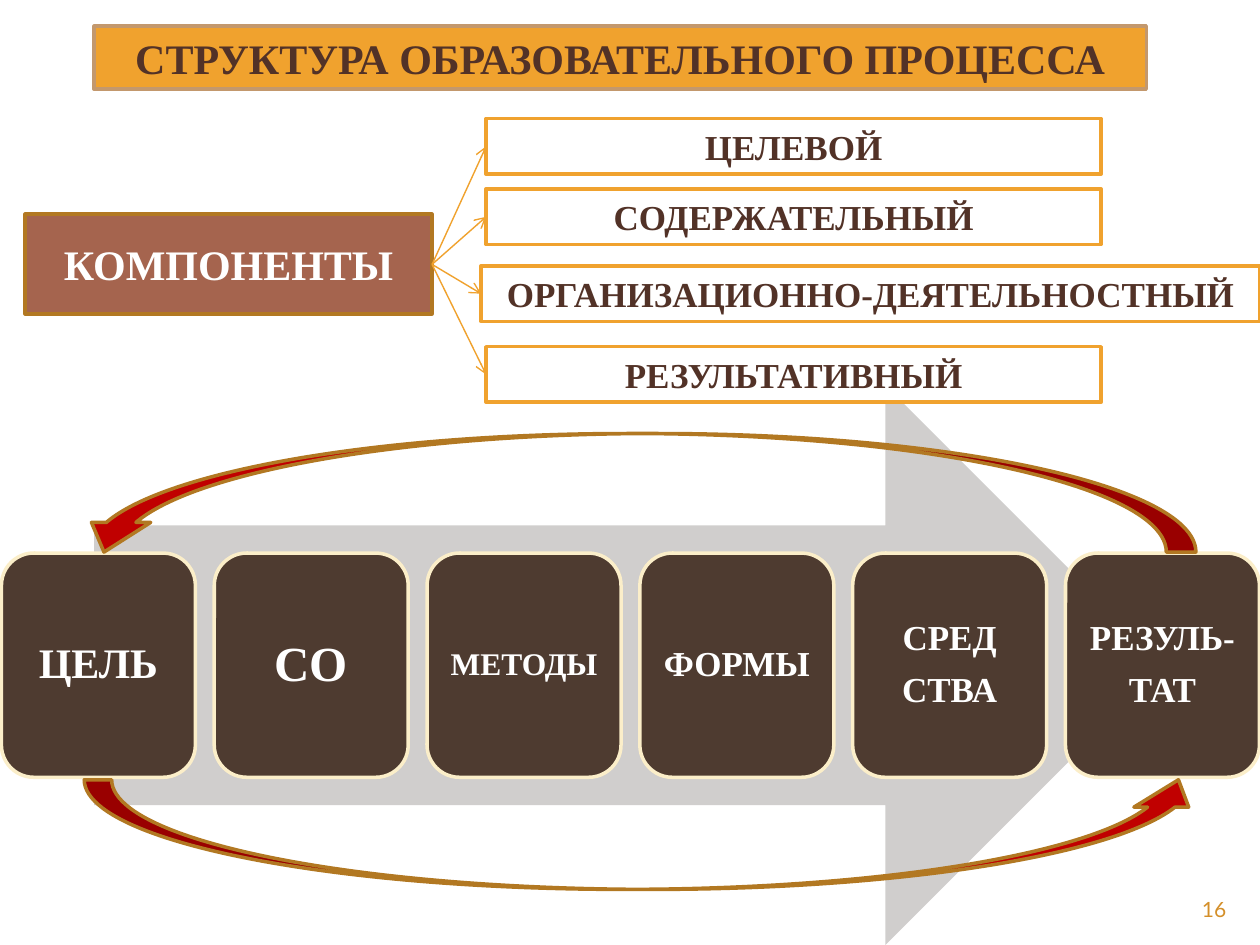
from lxml import etree
from pptx import Presentation
from pptx.dml.color import RGBColor
from pptx.enum.shapes import MSO_CONNECTOR, MSO_SHAPE
from pptx.enum.text import MSO_ANCHOR, PP_ALIGN
from pptx.oxml.ns import qn
from pptx.util import Cm, Pt

RECT, ROUND = MSO_SHAPE.RECTANGLE, MSO_SHAPE.ROUNDED_RECTANGLE
ARROW = MSO_SHAPE.RIGHT_ARROW
UP, DOWN = MSO_SHAPE.CURVED_UP_ARROW, MSO_SHAPE.CURVED_DOWN_ARROW
LINE = MSO_CONNECTOR.STRAIGHT
MID = MSO_ANCHOR.MIDDLE
MAIN, SIDE = PP_ALIGN.CENTER, PP_ALIGN.RIGHT

HUES = {
    "gold": "F0A22E", "tan": "C3986D", "brown": "523227", "clay": "A5644E",
    "rust": "B27822", "grey": "D0CECD", "dark": "4E3B30", "cream": "FBEEC9",
    "red": "C00000", "white": "FFFFFF", "amber": "D48F29",
}


def hue(name):
    return RGBColor.from_string(HUES[name])


def write(frame, text, size=20, color="brown", font="Times New Roman",
          bold=True, align=MAIN, lead=None, after=0, inset=0.25):
    frame.word_wrap = True
    frame.vertical_anchor = MID
    frame.margin_left = frame.margin_right = Cm(inset)
    frame.margin_top = frame.margin_bottom = Cm(0.13)
    for i, line in enumerate(text.split("\n")):
        para = frame.add_paragraph() if i else frame.paragraphs[0]
        para.alignment = align
        para.line_spacing = lead
        para.space_after = Pt(after)
        run = para.add_run()
        run.text = line
        run.font.name = font
        run.font.size = Pt(size)
        run.font.bold = bold
        run.font.color.rgb = hue(color)


class Deck:
    """Hold the line style and the current slide."""

    def __init__(self, slide, width=2, thin=0.79):
        self.items = slide.shapes
        self.width = Pt(width)
        self.thin = Pt(thin)

    def shape(self, kind, at, fill, edge=None, text=None, **style):
        item = self.items.add_shape(kind, *map(Cm, at))
        item.shadow.inherit = False
        item.fill.solid()
        item.fill.fore_color.rgb = hue(fill)
        if edge:
            item.line.color.rgb = hue(edge)
            item.line.width = self.width
        else:
            item.line.fill.background()
        if text:
            write(item.text_frame, text, **style)
        return item

    def label(self, at, text, **style):
        item = self.items.add_textbox(*map(Cm, at))
        write(item.text_frame, text, **style)

    def arrow(self, start, end, color):
        item = self.items.add_connector(LINE, *map(Cm, start + end))
        item.line.color.rgb = hue(color)
        item.line.width = self.thin
        etree.SubElement(item.line._get_or_add_ln(), qn("a:tailEnd"), type="arrow")
        etree.SubElement(item._element.spPr, qn("a:effectLst"))


def main():
    show = Presentation()
    show.slide_width, show.slide_height = Cm(25.4), Cm(19.05)
    deck = Deck(show.slides.add_slide(show.slide_layouts[6]))

    deck.label((22.86, 17.98, 2.11, 0.69), "16", size=12, color="amber",
               font="Lato", bold=False, align=SIDE)
    deck.shape(RECT, (1.9, 0.53, 21.21, 1.27), "gold", "tan",
               "СТРУКТУРА ОБРАЗОВАТЕЛЬНОГО ПРОЦЕССА", size=24)

    deck.shape(ARROW, (1.9, 7.77, 21.59, 11.28), "grey")
    steps = [("ЦЕЛЬ", 24), ("СО", 28), ("МЕТОДЫ", 18), ("ФОРМЫ", 20),
             ("СРЕД\nСТВА", 20), ("РЕЗУЛЬ-\nТАТ", 20)]
    for i, (text, size) in enumerate(steps):
        deck.shape(ROUND, (0.03 + 4.29 * i, 11.15, 3.91, 4.52), "dark", "cream",
                   text, size=size, color="white", lead=0.9, after=8, inset=0.2)
    deck.shape(UP, (1.7, 15.72, 22.61, 2.21), "red", "rust")
    back = deck.shape(DOWN, (1.5, 8.74, 22.61, 2.39), "red", "rust")
    back._element.spPr.xfrm.set("flipH", "1")

    deck.shape(RECT, (0.51, 4.32, 8.2, 2.01), "clay", "rust",
               "КОМПОНЕНТЫ", size=24, color="white")
    tall = 1.12
    parts = [("ЦЕЛЕВОЙ", 9.8, 2.39, 12.4),
             ("СОДЕРЖАТЕЛЬНЫЙ", 9.8, 3.81, 12.4),
             ("ОРГАНИЗАЦИОННО-ДЕЯТЕЛЬНОСТНЫЙ", 9.7, 5.36, 15.7),
             ("РЕЗУЛЬТАТИВНЫЙ", 9.8, 6.99, 12.4)]
    for text, left, top, wide in parts:
        deck.shape(RECT, (left, top, wide, tall), "white", "gold", text)
        deck.arrow((8.71, 5.33), (left, top + tall / 2), "gold")

    show.save("out.pptx")


if __name__ == "__main__":
    main()
